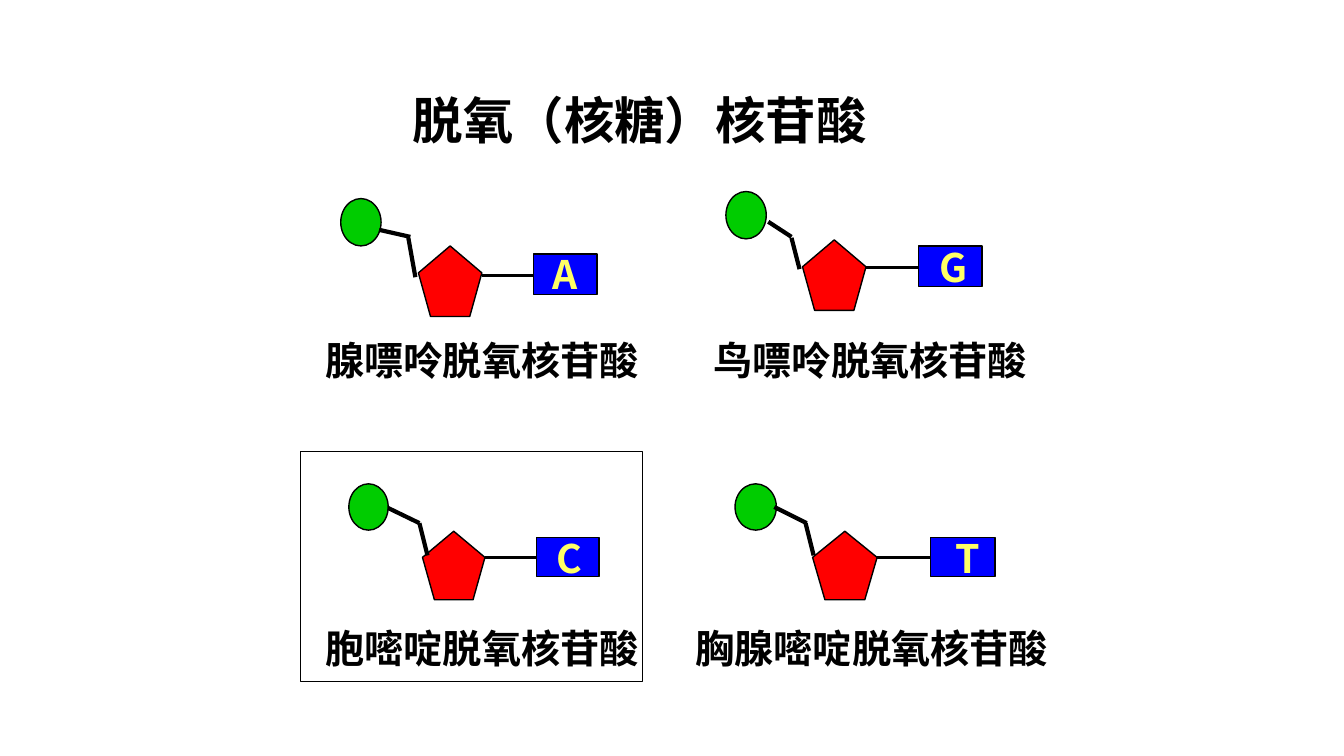
from lxml import etree
from pptx import Presentation
from pptx.dml.color import RGBColor
from pptx.enum.shapes import MSO_CONNECTOR, MSO_SHAPE
from pptx.enum.text import PP_ALIGN
from pptx.oxml.ns import qn
from pptx.util import Inches, Pt

STRAIGHT = MSO_CONNECTOR.STRAIGHT
RECTANGLE = MSO_SHAPE.RECTANGLE
PENTAGON = MSO_SHAPE.REGULAR_PENTAGON
OVAL = MSO_SHAPE.OVAL
LEFT, CENTER = PP_ALIGN.LEFT, PP_ALIGN.CENTER

BLACK = RGBColor(0x00, 0x00, 0x00)
WHITE = RGBColor(0xFF, 0xFF, 0xFF)
RED = RGBColor(0xFF, 0x00, 0x00)
BLUE = RGBColor(0x00, 0x00, 0xFF)
GREEN = RGBColor(0x00, 0xCC, 0x00)
YELLOW = RGBColor(0xFF, 0xFF, 0x66)
FONT = "Noto Sans CJK SC"


def add_outlined(shapes, kind, bounds, fill):
    """Add a filled shape with a thin black outline."""
    shape = shapes.add_shape(kind, *map(Inches, bounds))
    shape.shadow.inherit = False
    shape.fill.solid()
    shape.fill.fore_color.rgb = fill
    shape.line.color.rgb = BLACK
    shape.line.width = Pt(1)


def add_text(shapes, text, bounds, size=28, color=BLACK, align=LEFT, wrap=True):
    box = shapes.add_textbox(*map(Inches, bounds))
    box.text_frame.word_wrap = wrap
    para = box.text_frame.paragraphs[0]
    para.alignment = align
    span = para.add_run()
    span.text = text
    for name, value in {"name": FONT, "size": Pt(size), "bold": True}.items():
        setattr(span.font, name, value)
    span.font.color.rgb = color
    east_asian = etree.SubElement(span.font._element, qn("a:ea"))
    east_asian.set("typeface", FONT)


deck = Presentation()
deck.slide_width, deck.slide_height = Inches(13.33), Inches(7.5)
page = deck.slides.add_slide(deck.slide_layouts[6])

# Bounds are left, top, width, height; each arm runs from phosphate to sugar.
nucleotides = [
    {"letter": "T", "sugar": (8.06, 5.27, 0.64, 0.68),
     "base": (9.23, 5.33, 0.64, 0.39), "phosphate": (7.29, 4.8, 0.41, 0.46),
     "letter_box": (9.38, 5.25, 0.44, 0.57), "bond_y": 5.53,
     "arms": [(7.68, 5.03, 8, 5.19), (7.99, 5.19, 8.07, 5.51)],
     "name": "胸腺嘧啶脱氧核苷酸", "name_box": (6.8, 6.14, 4.16, 0.57)},
    {"letter": "G", "sugar": (7.96, 2.38, 0.63, 0.7),
     "base": (9.11, 2.44, 0.63, 0.4), "phosphate": (7.2, 1.9, 0.4, 0.47),
     "letter_box": (9.22, 2.36, 0.5, 0.57), "bond_y": 2.65,
     "arms": [(7.62, 2.2, 7.85, 2.35), (7.85, 2.36, 7.93, 2.67)],
     "name": "鸟嘌呤脱氧核苷酸", "name_box": (6.98, 3.29, 3.8, 0.57)},
    {"letter": "A", "sugar": (4.15, 2.44, 0.63, 0.7),
     "base": (5.29, 2.52, 0.63, 0.4), "phosphate": (3.38, 1.97, 0.4, 0.47),
     "letter_box": (5.38, 2.43, 0.49, 0.57), "bond_y": 2.73,
     "arms": [(3.76, 2.28, 4.07, 2.35), (4.05, 2.36, 4.12, 2.75)],
     "name": "腺嘌呤脱氧核苷酸", "name_box": (3.13, 3.29, 3.62, 0.57)},
    {"letter": "C", "sugar": (4.19, 5.27, 0.62, 0.68),
     "base": (5.32, 5.33, 0.62, 0.39), "phosphate": (3.46, 4.8, 0.39, 0.46),
     "letter_box": (5.42, 5.25, 0.41, 0.57), "bond_y": 5.53,
     "arms": [(3.85, 5.04, 4.16, 5.19), (4.16, 5.19, 4.24, 5.51)],
     "name": "胞嘧啶脱氧核苷酸", "name_box": (3.13, 6.14, 3.72, 0.57),
     "frame": (2.98, 4.48, 3.39, 2.28)},
]

add_text(page.shapes, "脱氧（核糖）核苷酸", (2.42, 0.83, 7.85, 0.71), size=36, align=CENTER)

for nucleotide in nucleotides:
    parts = page.shapes.add_group_shape().shapes
    if "frame" in nucleotide:
        add_outlined(parts, RECTANGLE, nucleotide["frame"], WHITE)
    sugar, base = nucleotide["sugar"], nucleotide["base"]
    add_outlined(parts, PENTAGON, sugar, RED)
    add_outlined(parts, RECTANGLE, base, BLUE)
    add_outlined(parts, OVAL, nucleotide["phosphate"], GREEN)

    bond_y = nucleotide["bond_y"]
    bond = (sugar[0] + sugar[2], bond_y, base[0], bond_y)
    strokes = [(bond, 2.25)] + [(arm, 3) for arm in nucleotide["arms"]]
    for ends, width in strokes:
        line = parts.add_connector(STRAIGHT, *map(Inches, ends))
        line.line.color.rgb = BLACK
        line.line.width = Pt(width)
        etree.SubElement(line._element.spPr, qn("a:effectLst"))

    add_text(parts, nucleotide["letter"], nucleotide["letter_box"], color=YELLOW, wrap=False)
    add_text(page.shapes, nucleotide["name"], nucleotide["name_box"])

deck.save("out.pptx")
